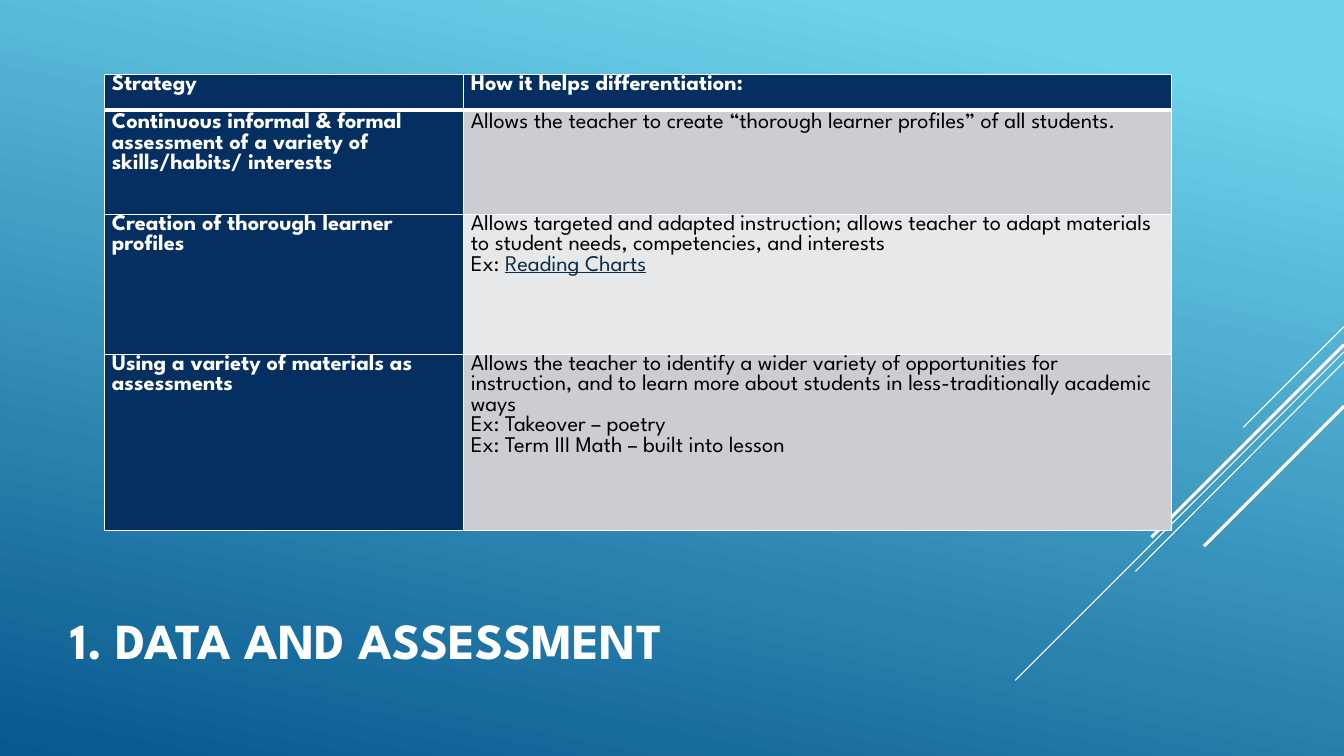
from lxml import etree
from pptx import Presentation
from pptx import util as u
from pptx.dml.color import RGBColor
from pptx.enum import shapes, text
from pptx.oxml import ns

FONT = "League Spartan"
COLORS = {
    "white": "FFFFFF", "black": "000000", "navy": "052F61", "link": "0D2E46",
    "band_dark": "CCCDD2", "band_light": "E7E8EA",
    "sky": "6ED2EB", "deep": "06588E",
}
DIAGONALS = [
    ((13.33, 3.24), (12.33, 4.24), 0.75),
    ((13.33, 3.49), (10.07, 6.75), 0.75),
    ((13.33, 3.59), (11.26, 5.67), 0.75),
    ((13.33, 3.42), (11.42, 5.33), 2.25),
    ((13.33, 4.03), (11.94, 5.42), 2.25),
]
COL_WIDTHS = [3.56, 7.02]
ROW_HEIGHTS = [0.35, 1.04, 1.39, 1.74]
ROWS = [
    ("Strategy", [["How it helps differentiation:"]]),
    ("Continuous informal & formal assessment of a variety of skills/habits/ interests",
     [["Allows the teacher to create “thorough learner profiles” of all students."]]),
    ("Creation of thorough learner profiles",
     [["Allows targeted and adapted instruction; allows teacher to adapt materials "
       "to student needs, competencies, and interests"],
      ["Ex: ", "Reading Charts"]]),
    ("Using a variety of materials as assessments",
     [["Allows the teacher to identify a wider variety of opportunities for instruction, "
       "and to learn more about students in less-traditionally academic ways"],
      ["Ex: Takeover – poetry"],
      ["Ex: Term III Math – built into lesson"]]),
]


def rgb(name):
    """Return the named colour."""
    return RGBColor.from_string(COLORS[name])


def add_run(p, words, size, color, bold=False, underline=False):
    """Append one formatted run to a paragraph."""
    r = p.add_run()
    r.text = words
    r.font.name = FONT
    r.font.size = u.Pt(size)
    r.font.bold = bold
    r.font.underline = underline
    r.font.color.rgb = rgb(color)


def set_background(s):
    """Fill the slide background with the blue gradient."""
    fill = s.background.fill
    fill.gradient()
    fill.gradient_angle = 258
    for stop, position, color in zip(fill.gradient_stops, (0.1, 1), ("sky", "deep")):
        stop.position = position
        stop.color.rgb = rgb(color)


def add_diagonal(s, start, end, width):
    """Draw one white diagonal line without a shadow."""
    points = [u.Inches(v) for v in start + end]
    line = s.shapes.add_connector(shapes.MSO_CONNECTOR.STRAIGHT, *points)
    line.line.color.rgb = rgb("white")
    line.line.width = u.Pt(width)
    etree.SubElement(line._element.spPr, ns.qn("a:effectLst"))


def set_title(s, words):
    """Place and format the title placeholder."""
    sp = s.shapes.title
    sp.left, sp.top = u.Inches(0.6), u.Inches(5.35)
    sp.width, sp.height = u.Inches(9.33), u.Inches(1.98)
    tf = sp.text_frame
    tf.word_wrap = True
    tf.vertical_anchor = text.MSO_ANCHOR.MIDDLE
    p = tf.paragraphs[0]
    p.alignment = text.PP_ALIGN.LEFT
    add_run(p, words, 36, "white", bold=True)


def set_borders(cell, top, bottom):
    """Give a cell white borders, with the top and bottom widths in points."""
    tc_pr = cell._tc.get_or_add_tcPr()
    for side, width in (("L", 1), ("R", 1), ("T", top), ("B", bottom)):
        ln = etree.SubElement(tc_pr, ns.qn(f"a:ln{side}"), w=str(u.Pt(width)))
        fill = etree.SubElement(ln, ns.qn("a:solidFill"))
        etree.SubElement(fill, ns.qn("a:srgbClr"), val=COLORS["white"])


def fill_cell(cell, paragraphs, fill, color, bold, top_margin):
    """Fill a cell and write its paragraphs; a second run is a link label."""
    cell.fill.solid()
    cell.fill.fore_color.rgb = rgb(fill)
    cell.margin_left = cell.margin_right = u.Inches(0.07)
    cell.margin_top, cell.margin_bottom = u.Inches(top_margin), 0
    tf = cell.text_frame
    for i, runs in enumerate(paragraphs):
        p = tf.add_paragraph() if i else tf.paragraphs[0]
        for j, words in enumerate(runs):
            add_run(p, words, 16, "link" if j else color, bold, underline=j > 0)


def add_strategy_table(s):
    """Add the table of strategies and their benefits."""
    frame = s.shapes.add_table(
        len(ROWS), len(COL_WIDTHS), u.Inches(1.04), u.Inches(0.74),
        u.Inches(sum(COL_WIDTHS)), u.Inches(sum(ROW_HEIGHTS)))
    table = frame.table
    for column, width in zip(table.columns, COL_WIDTHS):
        column.width = u.Inches(width)
    for i, (strategy, benefit) in enumerate(ROWS):
        table.rows[i].height = u.Inches(ROW_HEIGHTS[i])
        band = "band_dark" if i % 2 else "band_light"
        below_header = i == 1
        for j, paragraphs in enumerate(([[strategy]], benefit)):
            cell = table.cell(i, j)
            heading = i == 0 or j == 0
            set_borders(cell, 3 if below_header else 1, 3 if i == 0 else 1)
            fill_cell(cell, paragraphs, "navy" if heading else band,
                      "white" if heading else "black", heading,
                      0.03 if below_header else 0)


def main():
    """Build and save the slide."""
    prs = Presentation()
    prs.slide_width, prs.slide_height = u.Inches(13.33), u.Inches(7.5)
    s = prs.slides.add_slide(prs.slide_layouts[5])
    set_background(s)
    for start, end, width in DIAGONALS:
        add_diagonal(s, start, end, width)
    set_title(s, "1. DATA AND ASSESSMENT")
    add_strategy_table(s)
    prs.save("out.pptx")


if __name__ == "__main__":
    main()
